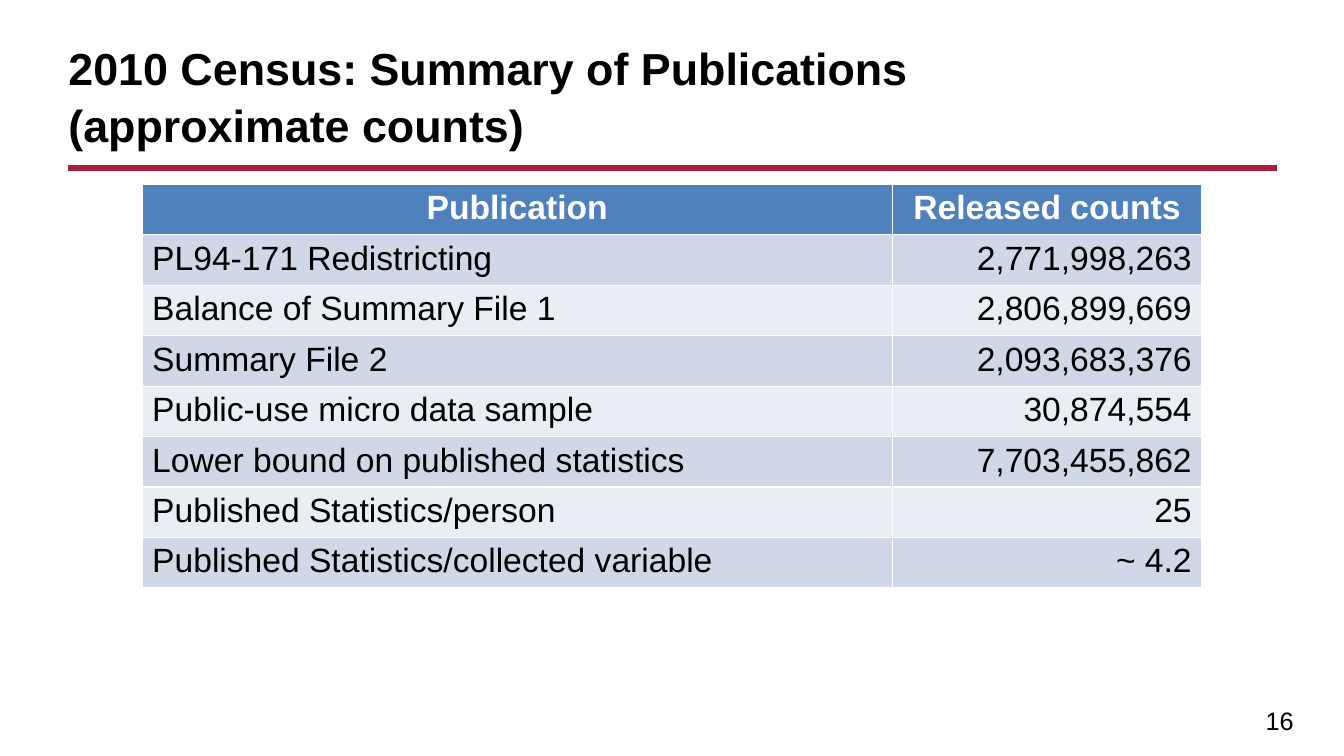
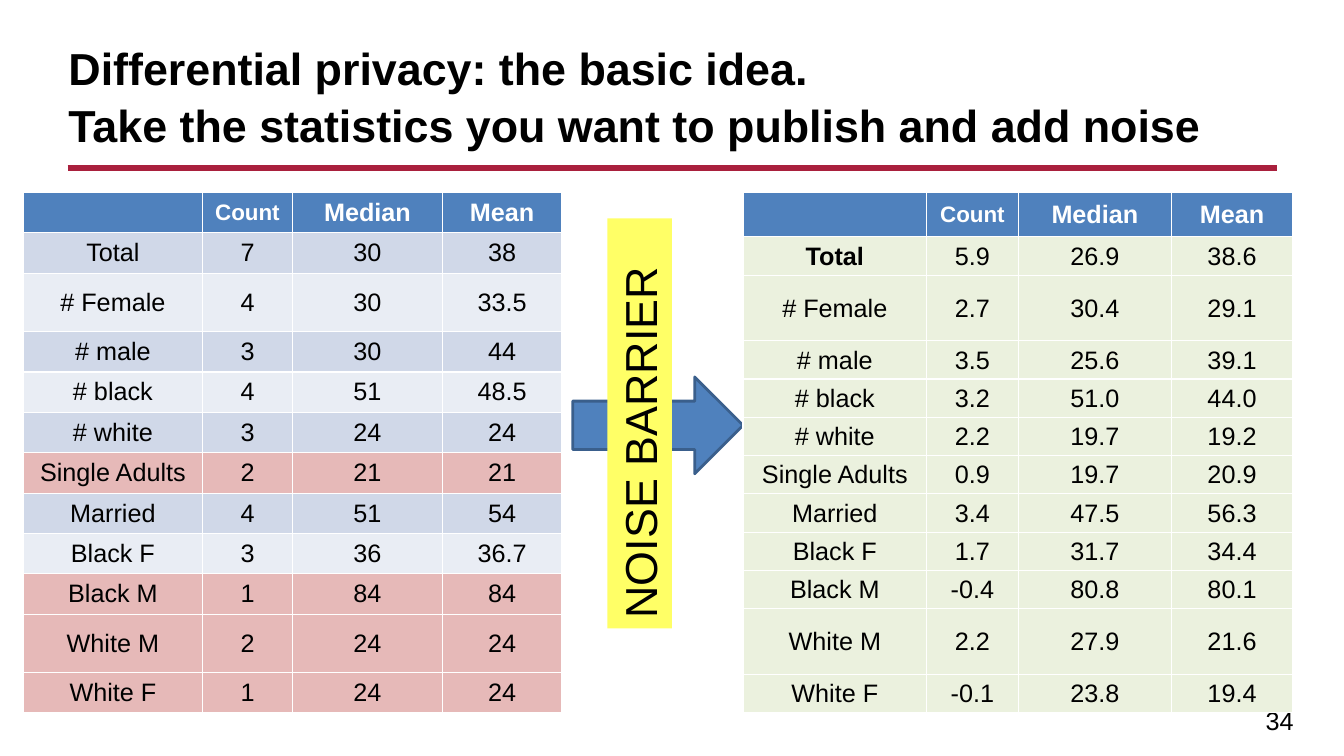
import pptx
import pptx.dml.color
import pptx.enum.shapes
import pptx.enum.text
import pptx.oxml
import pptx.util

Inches, Pt = pptx.util.Inches, pptx.util.Pt
ALIGN, ANCHOR = pptx.enum.text.PP_ALIGN, pptx.enum.text.MSO_ANCHOR
SHAPE = pptx.enum.shapes.MSO_SHAPE


class Theme:
    font = "Arial"
    black, white = "000000", "FFFFFF"
    rule, blue, blue_edge = "A9203D", "4F81BD", "3A5F8C"
    bands = ("D0D8E8", "E9EDF4")
    pink, green, yellow = "E6B9B8", "EBF1DE", "FFFF66"
    title_size, table_size, body_size, small_size = 32, 24, 18, 16


PUBLICATIONS = {
    "title": "2010 Census: Summary of Publications\v(approximate counts)",
    "number": "16",
    "rows": [
        ("Publication", "Released counts"),
        ("PL94-171 Redistricting", "2,771,998,263"),
        ("Balance of Summary File 1", "2,806,899,669"),
        ("Summary File 2", "2,093,683,376"),
        ("Public-use micro data sample", "30,874,554"),
        ("Lower bound on published statistics", "7,703,455,862"),
        ("Published Statistics/person", "25"),
        ("Published Statistics/collected variable", "~ 4.2"),
    ],
}

PRIVACY = {
    "title": "Differential privacy: the basic idea.\v"
             "Take the statistics you want to publish and add noise",
    "number": "34",
    "barrier": "NOISE BARRIER",
    "header": ("", "Count", "Median", "Mean"),
    # group, true statistics, noisy statistics
    "groups": [
        ("Total", ("7", "30", "38"), ("5.9", "26.9", "38.6")),
        ("# Female", ("4", "30", "33.5"), ("2.7", "30.4", "29.1")),
        ("# male", ("3", "30", "44"), ("3.5", "25.6", "39.1")),
        ("# black", ("4", "51", "48.5"), ("3.2", "51.0", "44.0")),
        ("# white", ("3", "24", "24"), ("2.2", "19.7", "19.2")),
        ("Single Adults", ("2", "21", "21"), ("0.9", "19.7", "20.9")),
        ("Married", ("4", "51", "54"), ("3.4", "47.5", "56.3")),
        ("Black F", ("3", "36", "36.7"), ("1.7", "31.7", "34.4")),
        ("Black M", ("1", "84", "84"), ("-0.4", "80.8", "80.1")),
        ("White M", ("2", "24", "24"), ("2.2", "27.9", "21.6")),
        ("White F", ("1", "24", "24"), ("-0.1", "23.8", "19.4")),
    ],
    "small_groups": {"Single Adults", "Black M", "White M", "White F"},
    "tall_groups": {"# Female", "White M"},
}


def rgb(value):
    return pptx.dml.color.RGBColor.from_string(value)


def write(frame, text, size, color=Theme.black, bold=False, align=ALIGN.LEFT):
    para = frame.paragraphs[0]
    para.text = text
    para.alignment = align
    font = para.font
    font.name, font.size, font.bold = Theme.font, Pt(size), bold
    font.color.rgb = rgb(color)
    return para


def add_text(page, place, text, size, anchor=ANCHOR.TOP, **style):
    box = page.shapes.add_textbox(*map(Inches, place))
    box.text_frame.word_wrap = True
    box.text_frame.vertical_anchor = anchor
    return write(box.text_frame, text, size, **style)


def add_page(deck, content):
    """Add a blank page with the shared title, rule and page number."""
    page = deck.slides.add_slide(deck.slide_layouts[6])
    rule = page.shapes.add_connector(
        pptx.enum.shapes.MSO_CONNECTOR.STRAIGHT,
        *map(Inches, (0.67, 1.67, 12.67, 1.67)))
    rule.line.color.rgb = rgb(Theme.rule)
    rule.line.width = Pt(4.5)
    properties = rule._element.spPr
    properties.append(pptx.oxml.parse_xml(
        '<a:effectLst xmlns:a="http://schemas.openxmlformats.org/drawingml/2006/main"/>'))
    title = add_text(page, (0.58, 0.3, 12.08, 1.25), content["title"],
                     Theme.title_size, anchor=ANCHOR.BOTTOM, bold=True)
    title.line_spacing = 1.05
    add_text(page, (10.1, 6.95, 2.83, 0.39), content["number"],
             Theme.body_size, align=ALIGN.RIGHT)
    return page


def add_grid(page, left, top, widths, heights, rows, fills, size, aligns,
             anchor=ANCHOR.TOP):
    """Add a table whose first row is a header; fills are given per body row."""
    frame = page.shapes.add_table(
        len(rows), len(widths), Inches(left), Inches(top),
        Inches(sum(widths)), Inches(sum(heights)))
    table = frame.table
    for column, width in zip(table.columns, widths):
        column.width = Inches(width)
    for row, height in zip(table.rows, heights):
        row.height = Inches(height)
    for r, (texts, fill) in enumerate(zip(rows, [Theme.blue, *fills])):
        for c, text in enumerate(texts):
            cell = table.cell(r, c)
            cell.fill.solid()
            cell.fill.fore_color.rgb = rgb(fill)
            cell.vertical_anchor = anchor
            if r == 0:
                write(cell.text_frame, text, size, Theme.white, True, ALIGN.CENTER)
            else:
                write(cell.text_frame, text, size, align=aligns[c])
    return table


def add_block(page, shape, place, fill):
    block = page.shapes.add_shape(shape, *map(Inches, place))
    block.shadow.inherit = False
    block.fill.solid()
    block.fill.fore_color.rgb = rgb(fill)
    block.line.fill.background()
    return block


def add_statistics(page, left, widths, heights, rows, fills):
    table = add_grid(page, left, 1.91, widths, heights, rows, fills,
                     Theme.body_size, [ALIGN.CENTER] * len(widths), ANCHOR.MIDDLE)
    table.cell(0, 1).text_frame.paragraphs[0].font.size = Pt(Theme.small_size)
    return table


def build_publications(deck):
    page = add_page(deck, PUBLICATIONS)
    rows = PUBLICATIONS["rows"]
    body = len(rows) - 1
    add_grid(page, 1.41, 1.83, (7.44, 3.07), [0.5] + [0.47] * body, rows,
             [Theme.bands[i % 2] for i in range(body)],
             Theme.table_size, (ALIGN.LEFT, ALIGN.RIGHT))


def build_privacy(deck):
    page = add_page(deck, PRIVACY)
    header, groups = PRIVACY["header"], PRIVACY["groups"]

    def heights(first, tall):
        return [first] + [tall if name in PRIVACY["tall_groups"] else 0.38
                          for name, _, _ in groups]

    true_rows = [header] + [(name, *true) for name, true, _ in groups]
    noisy_rows = [header] + [(name, *noisy) for name, _, noisy in groups]
    true_fills = [Theme.pink if name in PRIVACY["small_groups"] else Theme.bands[i % 2]
                  for i, (name, _, _) in enumerate(groups)]

    add_statistics(page, 0.23, (1.78, 0.89, 1.49, 1.18), heights(0.38, 0.58),
                   true_rows, true_fills)

    arrow = add_block(page, SHAPE.RIGHT_ARROW, (5.68, 3.74, 1.69, 0.96), Theme.blue)
    arrow.line.color.rgb = rgb(Theme.blue_edge)
    arrow.line.width = Pt(2)

    barrier = add_block(page, SHAPE.RECTANGLE, (4.31, 3.88, 4.07, 0.64), Theme.yellow)
    barrier.rotation = 270
    barrier.text_frame.vertical_anchor = ANCHOR.TOP
    write(barrier.text_frame, PRIVACY["barrier"], Theme.title_size)

    noisy = add_statistics(page, 7.37, (1.82, 0.91, 1.52, 1.2), heights(0.44, 0.65),
                           noisy_rows, [Theme.green] * len(groups))
    for r in range(1, len(noisy_rows)):
        for c in range(len(header)):
            cell = noisy.cell(r, c)
            cell.margin_left = cell.margin_top = cell.margin_right = Inches(0.01)
            cell.margin_bottom = 0
    noisy.cell(1, 0).text_frame.paragraphs[0].font.bold = True


def main():
    deck = pptx.Presentation()
    deck.slide_width, deck.slide_height = Inches(13.33), Inches(7.5)
    build_publications(deck)
    build_privacy(deck)
    deck.save("out.pptx")


if __name__ == "__main__":
    main()
